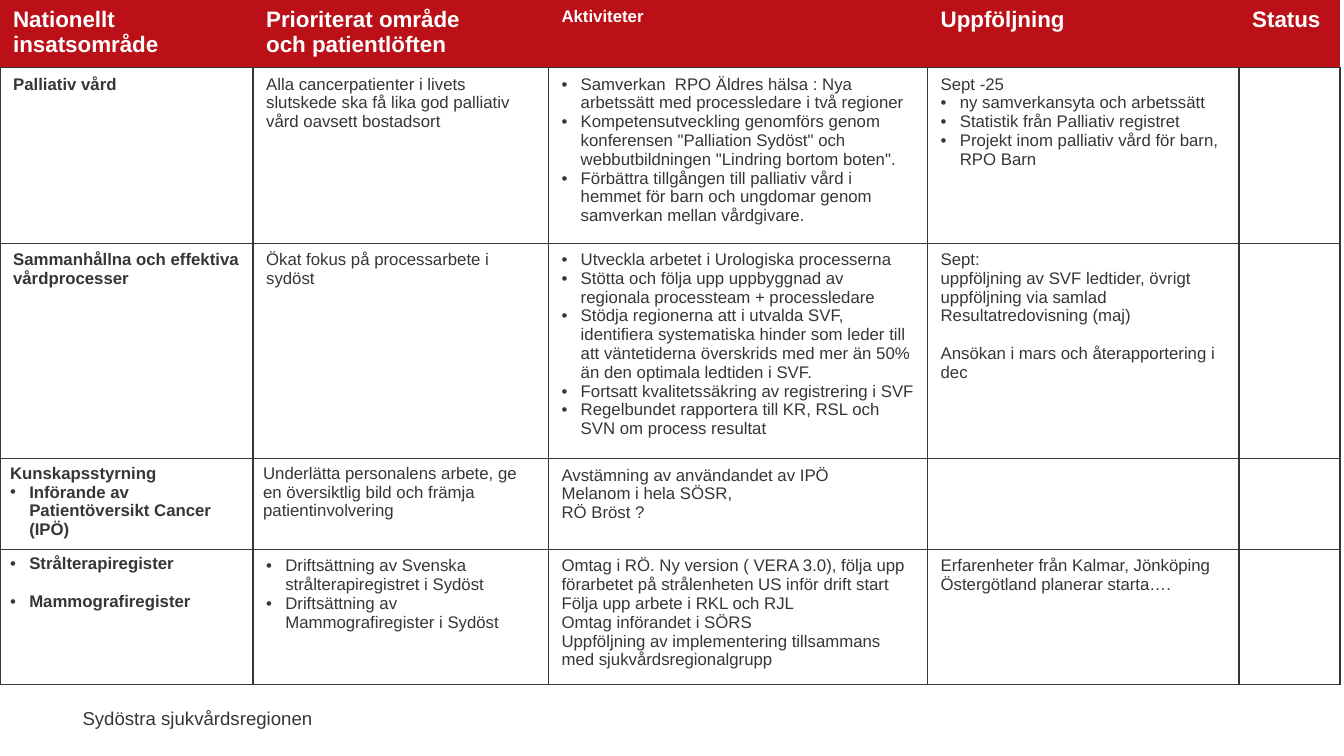
from collections import namedtuple

from lxml import etree
from pptx import Presentation
from pptx.dml.color import RGBColor
from pptx.enum.text import MSO_ANCHOR, PP_ALIGN
from pptx.oxml.ns import qn
from pptx.util import Inches, Pt

LEFT, RIGHT = PP_ALIGN.LEFT, PP_ALIGN.RIGHT
TOP = MSO_ANCHOR.TOP
COLORS = {"red": "BC1018", "ink": "363636", "white": "FFFFFF"}
FONT = "Arial"
INDENT = Inches(0.19)
BLANK_LINE = 13.4
COLS = [2.51, 2.93, 3.76, 3.09, 1.0]
ROWS = [0.67, 1.73, 2.13, 0.9, 1.34]
WIDE, NARROW = (0.13, 0.07), (0.1, 0.05)
TIGHT_CELLS = {(3, 0), (3, 1), (4, 0)}

Para = namedtuple("Para", "text bullet before", defaults=(False, 0))


def plain(*texts):
    return [Para(t) for t in texts]


def bullets(*texts):
    return [Para(t, True) for t in texts]


HEADERS = [
    ("Nationellt insatsområde", 16),
    ("Prioriterat område \noch patientlöften", 16),
    ("Aktiviteter", 12),
    ("Uppföljning", 16),
    ("Status", 16),
]
BODY = [
    [
        plain("Palliativ vård"),
        plain("Alla cancerpatienter i livets slutskede ska få lika god palliativ vård oavsett bostadsort"),
        bullets(
            "Samverkan  RPO Äldres hälsa : Nya arbetssätt med processledare i två regioner",
            'Kompetensutveckling genomförs genom konferensen "Palliation Sydöst" och '
            'webbutbildningen "Lindring bortom boten".',
            "Förbättra tillgången till palliativ vård i hemmet för barn och ungdomar "
            "genom samverkan mellan vårdgivare.",
        ),
        plain("Sept -25") + bullets(
            "ny samverkansyta och arbetssätt",
            "Statistik från Palliativ registret",
            "Projekt inom palliativ vård för barn, RPO Barn",
        ),
        [],
    ],
    [
        plain("Sammanhållna och effektiva vårdprocesser"),
        plain("Ökat fokus på processarbete i sydöst"),
        bullets(
            "Utveckla arbetet i Urologiska processerna",
            "Stötta och följa upp uppbyggnad av regionala processteam + processledare",
            "Stödja regionerna att i utvalda SVF, identifiera systematiska hinder som leder till "
            "att väntetiderna överskrids med mer än 50% än den optimala ledtiden i SVF.",
            "Fortsatt kvalitetssäkring av registrering i SVF",
            "Regelbundet rapportera till KR, RSL och SVN om process resultat",
        ),
        plain(
            "Sept:",
            "uppföljning av SVF ledtider, övrigt uppföljning via samlad Resultatredovisning (maj)",
        ) + [Para("Ansökan i mars och återapportering i dec", before=BLANK_LINE)],
        [],
    ],
    [
        plain("Kunskapsstyrning") + bullets("Införande av Patientöversikt Cancer (IPÖ)"),
        plain("Underlätta personalens arbete, ge en översiktlig bild och främja patientinvolvering"),
        plain("Avstämning av användandet av IPÖ", "Melanom i hela SÖSR,", "RÖ Bröst ?"),
        [],
        [],
    ],
    [
        bullets("Strålterapiregister") + [Para("Mammografiregister", True, BLANK_LINE)],
        bullets(
            "Driftsättning av Svenska strålterapiregistret i Sydöst",
            "Driftsättning av Mammografiregister i Sydöst",
        ),
        plain(
            "Omtag i RÖ. Ny version ( VERA 3.0), följa upp förarbetet på strålenheten US inför drift start",
            "Följa upp arbete i RKL och RJL",
            "Omtag införandet i SÖRS",
            "Uppföljning av implementering tillsammans med sjukvårdsregionalgrupp",
        ),
        plain("Erfarenheter från Kalmar, Jönköping", "Östergötland planerar starta…."),
        [],
    ],
]


def rgb(name):
    return RGBColor.from_string(COLORS[name])


def write(tf, paras, size=12, color="ink", bold=False, align=LEFT):
    for i, para in enumerate(paras):
        p = tf.paragraphs[0] if i == 0 else tf.add_paragraph()
        p.alignment = align
        p.space_before = Pt(para.before)
        if para.bullet:
            pPr = p._p.get_or_add_pPr()
            pPr.set("marL", str(INDENT))
            pPr.set("indent", str(-INDENT))
            etree.SubElement(pPr, qn("a:buFont")).set("typeface", FONT)
            etree.SubElement(pPr, qn("a:buChar")).set("char", "•")
        for j, line in enumerate(para.text.split("\n")):
            if j:
                p.add_line_break()
            r = p.add_run()
            r.text = line
            r.font.name, r.font.size, r.font.bold = FONT, Pt(size), bold
            r.font.color.rgb = rgb(color)


def style_cell(cell, fill, borders, inset):
    tcPr = cell._tc.get_or_add_tcPr()
    for side, (color, width) in borders.items():
        ln = etree.SubElement(tcPr, qn("a:ln" + side), w=str(Pt(width)))
        solid = etree.SubElement(ln, qn("a:solidFill"))
        etree.SubElement(solid, qn("a:srgbClr")).set("val", COLORS[color])
    cell.fill.solid()
    cell.fill.fore_color.rgb = rgb(fill)
    cell.margin_left = cell.margin_right = Inches(inset[0])
    cell.margin_top = cell.margin_bottom = Inches(inset[1])
    cell.vertical_anchor = TOP


def add_plan_table(s, x, y):
    frame = s.shapes.add_table(len(ROWS), len(COLS), Inches(x), Inches(y),
                               Inches(sum(COLS)), Inches(sum(ROWS)))
    table = frame.table
    table.first_row = table.horz_banding = False
    for col, width in zip(table.columns, COLS):
        col.width = Inches(width)
    for row, height in zip(table.rows, ROWS):
        row.height = Inches(height)

    dark, red = ("ink", 1), ("red", 0.75)
    for c, (title, size) in enumerate(HEADERS):
        cell = table.cell(0, c)
        style_cell(cell, "red", {"L": red, "R": red, "T": red, "B": dark}, WIDE)
        write(cell.text_frame, plain(title), size=size, color="white", bold=True)
    for r, row in enumerate(BODY, 1):
        for c, paras in enumerate(row):
            cell = table.cell(r, c)
            inset = NARROW if (r, c) in TIGHT_CELLS else WIDE
            style_cell(cell, "white", dict.fromkeys("LRTB", dark), inset)
            write(cell.text_frame, paras, bold=c == 0)


def add_footer(s, x, y, w, h):
    tf = s.shapes.add_textbox(Inches(x), Inches(y), Inches(w), Inches(h)).text_frame
    tf.word_wrap = False
    write(tf, plain("Sydöstra sjukvårdsregionen"), size=13.3, align=RIGHT)


def main():
    prs = Presentation()
    prs.slide_width, prs.slide_height = Inches(13.33), Inches(7.5)
    s = prs.slides.add_slide(prs.slide_layouts[6])
    add_footer(s, 0.7, 6.96, 2.5, 0.33)
    add_plan_table(s, 0, 0)
    prs.save("out.pptx")


if __name__ == "__main__":
    main()
